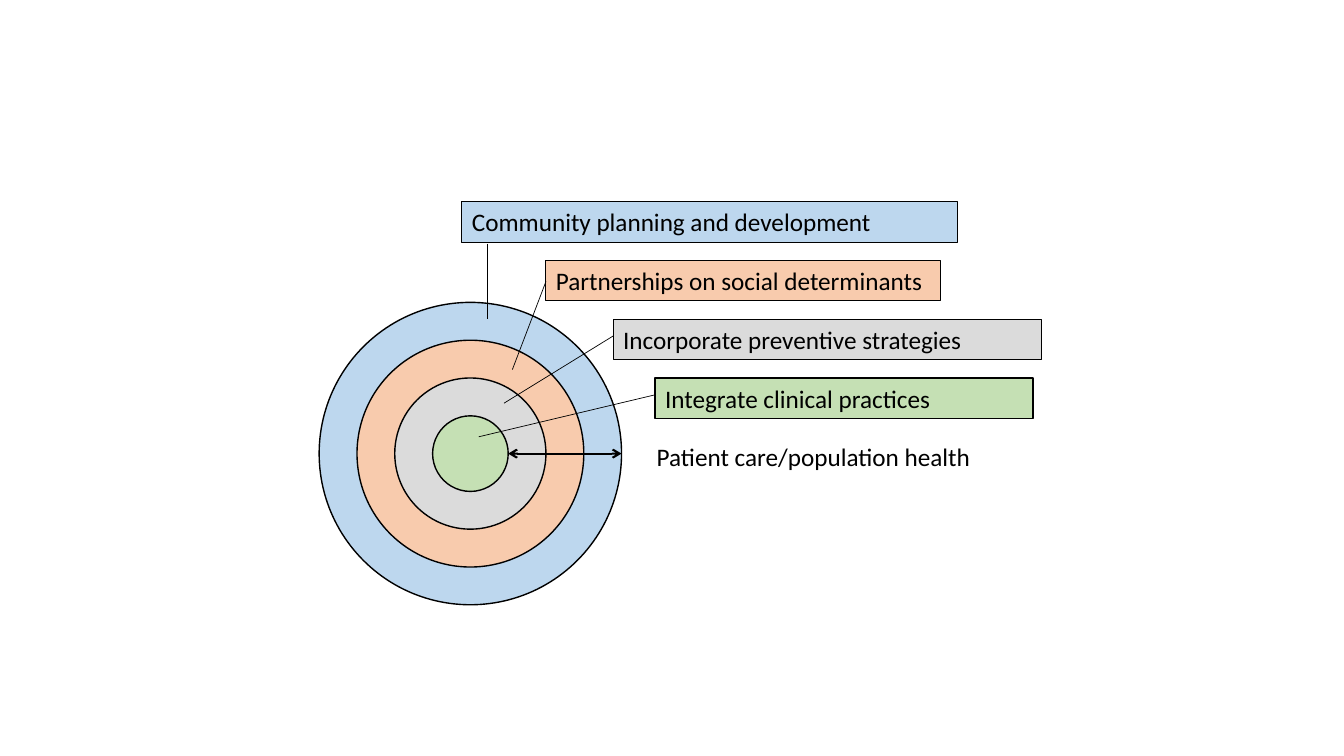
from dataclasses import dataclass
from typing import Optional

from lxml import etree
from pptx import Presentation
from pptx.dml.color import RGBColor
from pptx.enum.shapes import MSO_CONNECTOR, MSO_SHAPE
from pptx.enum.text import MSO_ANCHOR, MSO_AUTO_SIZE, PP_ALIGN
from pptx.oxml.ns import qn
from pptx.util import Pt

OVAL, RECTANGLE = MSO_SHAPE.OVAL, MSO_SHAPE.RECTANGLE
STRAIGHT = MSO_CONNECTOR.STRAIGHT
TOP, LEFT = MSO_ANCHOR.TOP, PP_ALIGN.LEFT
FIT_SHAPE = MSO_AUTO_SIZE.SHAPE_TO_FIT_TEXT


@dataclass(frozen=True)
class Theme:
    font: str = "Calibri"
    size: float = 18
    ink: str = "000000"
    community: str = "BDD7EE"
    partnership: str = "F8CBAD"
    prevention: str = "DBDBDB"
    clinical: str = "C5E0B4"


@dataclass(frozen=True)
class Label:
    text: str
    left: float
    width: float
    fill: Optional[str] = None
    border: float = 0.75


@dataclass(frozen=True)
class Line:
    start: tuple[float, float]
    end: tuple[float, float]
    weight: float = 0.5
    arrows: bool = False


THEME = Theme()
SLIDE_WIDTH, SLIDE_HEIGHT = 960, 540
CENTER_X, CENTER_Y = 336, 324
RING_STEP = 54
LABEL_TOP, LABEL_STEP, LABEL_HEIGHT = 144, 42, 29
RING_FILLS = (THEME.community, THEME.partnership, THEME.prevention, THEME.clinical)
LABELS = (
    Label("Community planning and development", 330, 354, THEME.community),
    Label("Partnerships on social determinants", 390, 282, THEME.partnership),
    Label("Incorporate preventive strategies", 438, 306, THEME.prevention),
    Label("Integrate clinical practices", 468, 270, THEME.clinical, 1),
    Label("Patient care/population health", 462, 270),
)
LINES = (
    Line((348, 174), (348, 228)),
    Line((390, 201), (366, 264)),
    Line((438, 240), (360, 288)),
    Line((468, 282), (342, 312)),
    Line((CENTER_X + RING_STEP / 2, CENTER_Y),
         (CENTER_X + RING_STEP * 2, CENTER_Y), 1.5, True),
)
FRAME_FORMAT = {"word_wrap": True, "auto_size": FIT_SHAPE, "vertical_anchor": TOP}
FONT_FORMAT = {"name": THEME.font, "size": Pt(THEME.size)}


def apply_format(target: object, values: dict) -> None:
    """Set every listed attribute on the target."""
    for name, value in values.items():
        setattr(target, name, value)


def style_line(line, weight: float) -> None:
    """Give a line the ink colour and a weight."""
    line.color.rgb = RGBColor.from_string(THEME.ink)
    line.width = Pt(weight)


def style_shape(shape, fill: str, border: float) -> None:
    """Give a shape a flat fill and a border."""
    shape.shadow.inherit = False
    shape.fill.solid()
    shape.fill.fore_color.rgb = RGBColor.from_string(fill)
    style_line(shape.line, border)


def draw_ring(slide, diameter: float, fill: str) -> None:
    """Draw one circle around the common centre."""
    left, top = CENTER_X - diameter / 2, CENTER_Y - diameter / 2
    shape = slide.shapes.add_shape(OVAL, Pt(left), Pt(top), Pt(diameter), Pt(diameter))
    style_shape(shape, fill, 1)


def draw_label(slide, label: Label, top: float) -> None:
    """Draw a filled label, or a plain text box when it has no fill."""
    box = (Pt(label.left), Pt(top), Pt(label.width), Pt(LABEL_HEIGHT))
    if label.fill:
        shape = slide.shapes.add_shape(RECTANGLE, *box)
        style_shape(shape, label.fill, label.border)
    else:
        shape = slide.shapes.add_textbox(*box)
    apply_format(shape.text_frame, FRAME_FORMAT)
    paragraph = shape.text_frame.paragraphs[0]
    paragraph.alignment = LEFT
    run = paragraph.add_run()
    run.text = label.text
    apply_format(run.font, FONT_FORMAT)
    run.font.color.rgb = RGBColor.from_string(THEME.ink)


def draw_line(slide, line: Line) -> None:
    """Draw a leader line or a double-headed arrow."""
    points = (Pt(value) for value in line.start + line.end)
    connector = slide.shapes.add_connector(STRAIGHT, *points)
    style_line(connector.line, line.weight)
    properties = connector._element.spPr
    if line.arrows:
        outline = properties.find(qn("a:ln"))
        for tag in ("a:headEnd", "a:tailEnd"):
            etree.SubElement(outline, qn(tag), type="arrow")
    etree.SubElement(properties, qn("a:effectLst"))


def main() -> None:
    """Build and save the slide."""
    presentation = Presentation()
    apply_format(presentation, {"slide_width": Pt(SLIDE_WIDTH),
                                "slide_height": Pt(SLIDE_HEIGHT)})
    slide = presentation.slides.add_slide(presentation.slide_layouts[6])
    for index, fill in enumerate(RING_FILLS):
        draw_ring(slide, RING_STEP * (len(RING_FILLS) - index), fill)
    for index, label in enumerate(LABELS):
        draw_label(slide, label, LABEL_TOP + LABEL_STEP * index)
    for line in LINES:
        draw_line(slide, line)
    presentation.save("out.pptx")


if __name__ == "__main__":
    main()
